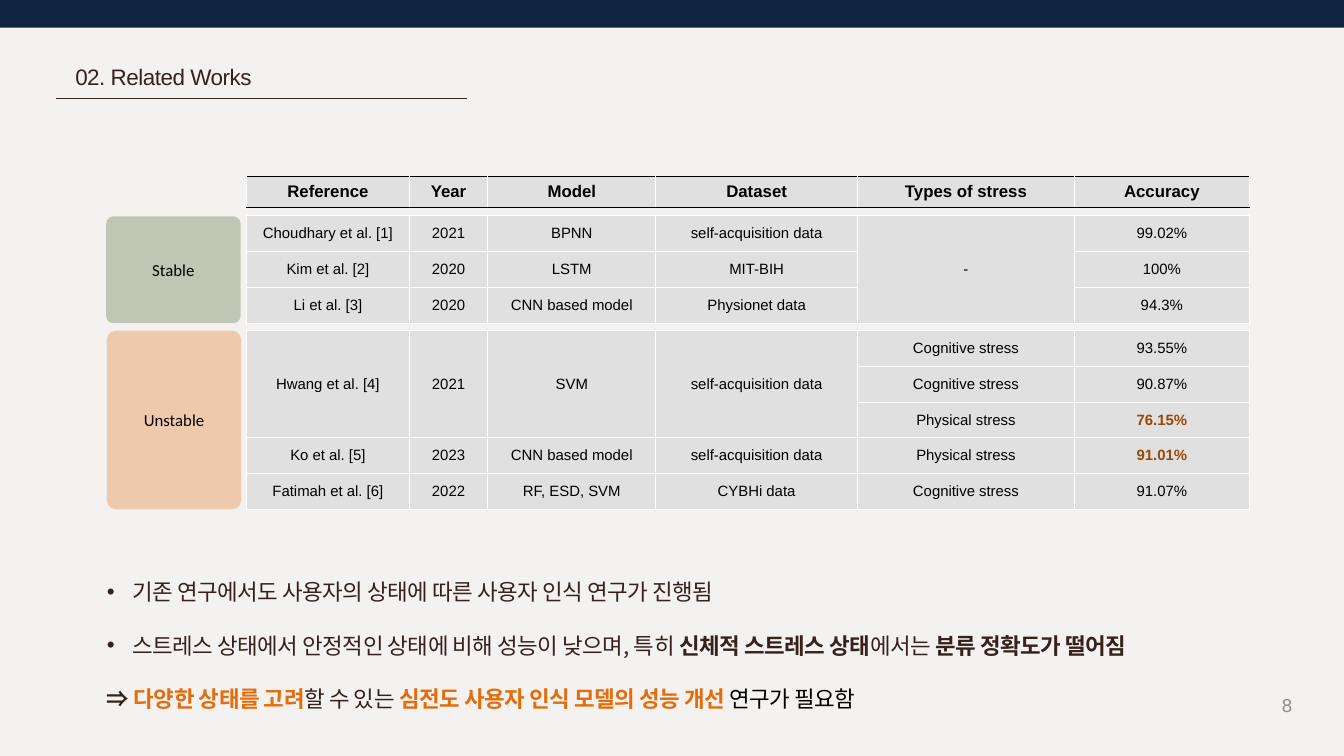
from lxml.etree import SubElement, fromstring
from pptx import Presentation
from pptx.dml.color import RGBColor
from pptx.enum.shapes import MSO_CONNECTOR, MSO_SHAPE
from pptx.enum.text import MSO_ANCHOR, MSO_AUTO_SIZE, PP_ALIGN
from pptx.oxml.ns import nsdecls, qn
from pptx.util import Inches, Pt

# The slide is a grid of 20 columns; a row is as tall as a column is wide.
WIDTH, HEIGHT = Inches(20), Inches(11.25)
UNIT = WIDTH // 20
KOREAN = "Noto Sans CJK KR"
INK, BLACK, ORANGE, BROWN = "36211B", "000000", "E46C0A", "984807"


def paint(fill, color, alpha=100):
    """Make a fill solid, with alpha as percent of opacity."""
    fill.solid()
    fill.fore_color.rgb = RGBColor.from_string(color)
    if alpha < 100:
        tint = fill._xPr.find(".//" + qn("a:srgbClr"))
        SubElement(tint, qn("a:alpha")).set("val", str(alpha * 1000))


def write(para, text, size=24, font="Arial", color=INK, bold=False,
          align=PP_ALIGN.LEFT, gap=0):
    """Add one run to a paragraph; gap is letter spacing in points."""
    para.alignment = align
    run = para.add_run()
    run.text = text
    run.font.size, run.font.bold = Pt(size), bold
    paint(run.font.fill, color)
    run.font.name = font
    props = run._r.get_or_add_rPr()
    SubElement(props, qn("a:ea")).set("typeface", KOREAN)
    if gap:
        props.set("spc", str(int(gap * 100)))


deck = Presentation()
deck.slide_width, deck.slide_height = WIDTH, HEIGHT
slide = deck.slides.add_slide(deck.slide_layouts[6])
shapes = slide.shapes
paint(slide.background.fill, "F3F2F1")

# Top band
band = shapes.add_shape(MSO_SHAPE.RECTANGLE, 0, 0, WIDTH, int(0.41 * UNIT))
band.shadow.inherit = False
paint(band.fill, "0F243E")
band.line.fill.background()

# Text boxes: title, page number, findings
frames = []
for box in [(1.12, 0.87, 2.79, 0.43), (17, 10.29, 2.33, 0.4), (1.59, 8.2, 16.99, 2.29)]:
    frame = shapes.add_textbox(*[int(n * UNIT) for n in box]).text_frame
    frame.word_wrap = True
    frames.append(frame)
title, page, notes = frames
for frame in (title, notes):
    frame.margin_left = frame.margin_top = frame.margin_right = frame.margin_bottom = 0
    frame.auto_size = MSO_AUTO_SIZE.SHAPE_TO_FIT_TEXT

title.word_wrap = False
title.paragraphs[0].line_spacing = Pt(33.6)
write(title.paragraphs[0], "02. Related Works", gap=-0.5)
page.vertical_anchor = MSO_ANCHOR.MIDDLE
write(page.paragraphs[0], "8", size=20, color="8C8C8C", align=PP_ALIGN.RIGHT)

rule = shapes.add_connector(MSO_CONNECTOR.STRAIGHT, int(0.83 * UNIT), int(1.46 * UNIT),
                            int(6.95 * UNIT), int(1.46 * UNIT))
paint(rule.line.fill, INK)
rule.line.width = Pt(0.75)
SubElement(rule._element.spPr, qn("a:effectLst"))

# Findings: runs of text, colour, bold
points = [
    (True, "Arial", [("기존 연구에서도 사용자의 상태에 따른 사용자 인식 연구가 진행됨", INK, False)]),
    (True, KOREAN, [
        ("스트레스 상태에서 안정적인 상태에 비해 성능이 낮으며, 특히 ", INK, False),
        ("신체적 스트레스 상태", INK, True),
        ("에서는 ", INK, False),
        ("분류 정확도가 떨어짐", INK, True)]),
    (False, KOREAN, [
        ("⇒ ", INK, True),
        ("다양한 상태를 고려", ORANGE, True),
        ("할 수 있는 ", INK, False),
        ("심전도 사용자 인식 모델의 성능 개선 ", ORANGE, True),
        ("연구가 필요함", BLACK, False)]),
]
for i, (dot, font, runs) in enumerate(points):
    para = notes.add_paragraph() if i else notes.paragraphs[0]
    para.line_spacing = 2.0
    if dot:
        props = para._p.get_or_add_pPr()
        props.set("marL", str(int(0.38 * UNIT)))
        props.set("indent", str(int(-0.38 * UNIT)))
        SubElement(props, qn("a:buFont")).set("typeface", "Arial")
        SubElement(props, qn("a:buChar")).set("char", "•")
    for text, color, bold in runs:
        write(para, text, font=font, color=color, bold=bold, gap=-0.5)

# State labels beside the tables
for text, left, top, tall, color in [("Stable", 1.58, 3.22, 1.59, "4F6228"),
                                     ("Unstable", 1.59, 4.92, 2.66, ORANGE)]:
    label = shapes.add_shape(MSO_SHAPE.ROUNDED_RECTANGLE, int(left * UNIT),
                             int(top * UNIT), 2 * UNIT, int(tall * UNIT))
    label.adjustments[0] = 0.068
    label.shadow.inherit = False
    paint(label.fill, color, 30)
    label.line.fill.background()
    label.text_frame.vertical_anchor = MSO_ANCHOR.MIDDLE
    write(label.text_frame.paragraphs[0], text, size=18, font="Calibri",
          color=BLACK, align=PP_ALIGN.CENTER)

# Tables: None joins a cell to the one above it
cols = [2.42, 1.17, 2.5, 3, 3.23, 2.6]
head = [["Reference", "Year", "Model", "Dataset", "Types of stress", "Accuracy"]]
unstable = [
    ["Hwang et al. [4]", "2021", "SVM", "self-acquisition data", "Cognitive stress", "93.55%"],
    [None, None, None, None, "Cognitive stress", "90.87%"],
    [None, None, None, None, "Physical stress", "76.15%"],
    ["Ko et al. [5]", "2023", "CNN based model", "self-acquisition data",
     "Physical stress", "91.01%"],
    ["Fatimah et al. [6]", "2022", "RF, ESD, SVM", "CYBHi data", "Cognitive stress", "91.07%"],
]
stable = [
    ["Choudhary et al. [1]", "2021", "BPNN", "self-acquisition data", "-", "99.02%"],
    ["Kim et al. [2]", "2020", "LSTM", "MIT-BIH", None, "100%"],
    ["Li et al. [3]", "2020", "CNN based model", "Physionet data", None, "94.3%"],
]
weak = {"76.15%", "91.01%"}

for rows, top, tall, size, edge in [(head, 2.62, 0.46, 18, BLACK),
                                    (unstable, 4.92, 0.532, 16, "FFFFFF"),
                                    (stable, 3.21, 0.532, 16, "FFFFFF")]:
    table = shapes.add_table(len(rows), len(cols), int(3.67 * UNIT), int(top * UNIT),
                             int(sum(cols) * UNIT), int(len(rows) * tall * UNIT)).table
    table.first_row = table.horz_banding = False
    for col, wide in zip(table.columns, cols):
        col.width = int(wide * UNIT)
    for r, row in enumerate(rows):
        table.rows[r].height = int(tall * UNIT)
        for c, text in enumerate(row):
            cell = table.cell(r, c)
            cell.vertical_anchor = MSO_ANCHOR.MIDDLE
            paint(cell.fill, "D9D9D9", 70)
            sides = [("L", "FFFFFF"), ("R", "FFFFFF"), ("T", edge), ("B", edge)]
            for i, (side, color) in enumerate(sides):
                cell._tc.get_or_add_tcPr().insert(i, fromstring(
                    f'<a:ln{side} {nsdecls("a")} w="12700"><a:solidFill>'
                    f'<a:srgbClr val="{color}"/></a:solidFill></a:ln{side}>'))
            if text:
                write(cell.text_frame.paragraphs[0], text, size=size,
                      color=BROWN if text in weak else BLACK,
                      bold=rows is head or text in weak, align=PP_ALIGN.CENTER)
    for c in range(len(cols)):
        gaps = [r for r, row in enumerate(rows) if row[c] is None]
        if gaps:
            table.cell(gaps[0] - 1, c).merge(table.cell(gaps[-1], c))

deck.save("out.pptx")
